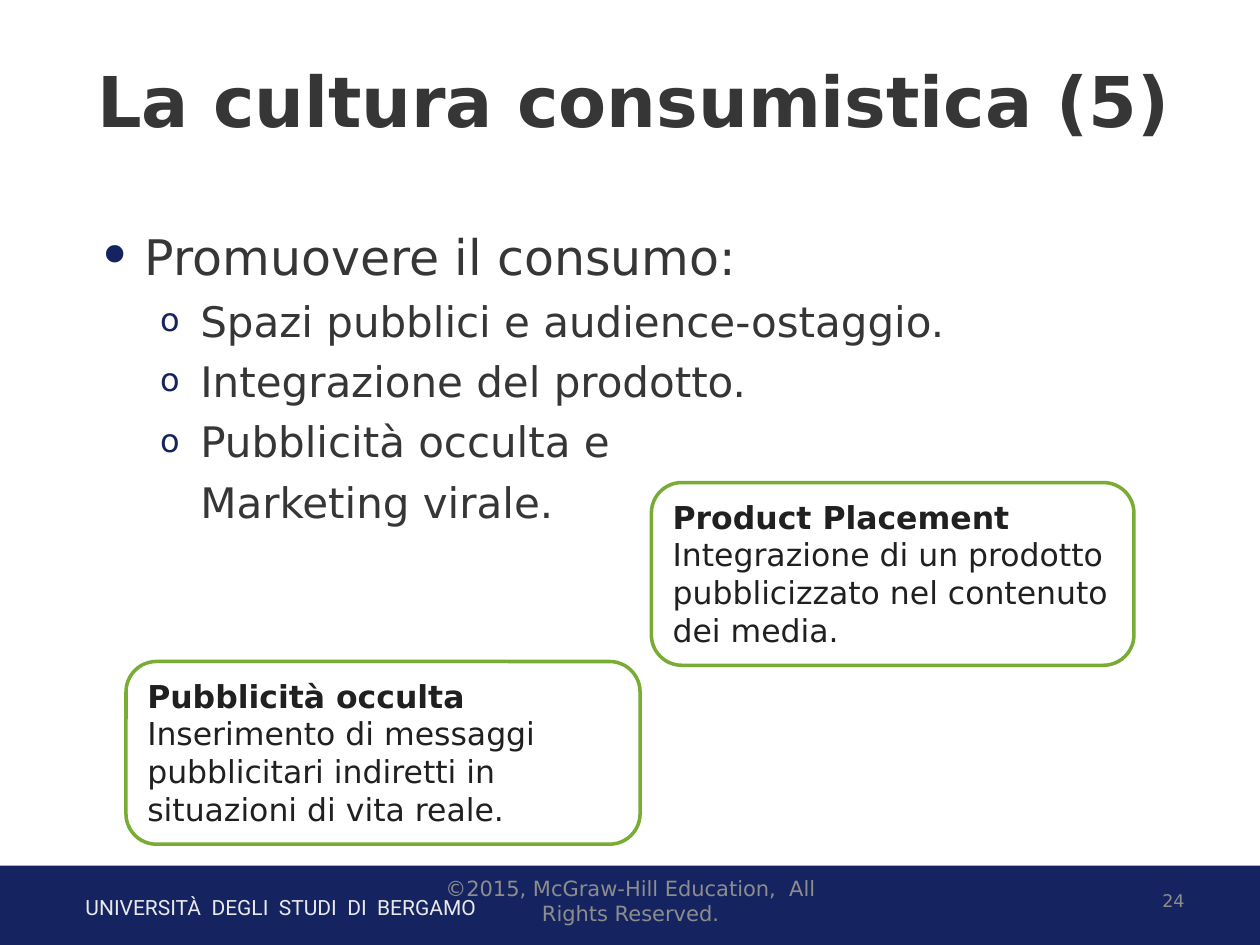
from lxml import etree
from pptx import Presentation
from pptx.dml.color import RGBColor
from pptx.enum.shapes import MSO_SHAPE as Kind
from pptx.enum.text import MSO_ANCHOR as Anchor, MSO_AUTO_SIZE as Fit, PP_ALIGN as Align
from pptx.oxml.ns import qn
from pptx.util import Inches, Pt

NAVY = RGBColor(0x15, 0x24, 0x60)
GREEN = RGBColor(0x78, 0xAC, 0x35)
WHITE = RGBColor(0xFF, 0xFF, 0xFF)
PALE = RGBColor(0xE9, 0xE9, 0xE9)
DARK = RGBColor(0x36, 0x36, 0x36)
INK = RGBColor(0x20, 0x20, 0x20)
GREY = RGBColor(0x8D, 0x8D, 0x8D)
SANS = "DejaVu Sans"

WIDTH, HEIGHT = 10, 7.5
BAR_TOP = 6.87
LEFT, SPAN = 0.67, 8.92

TITLE = "La cultura consumistica (5)"
# text, level, bullet
POINTS = [
    ("Promuovere il consumo:", 0, "•"),
    ("Spazi pubblici e audience-ostaggio.", 1, "o"),
    ("Integrazione del prodotto.", 1, "o"),
    ("Pubblicità occulta e", 1, "o"),
    ("Marketing virale.", 1, None),
]
# level: size, margin, hanging indent, bullet size in %, space before
LEVELS = {0: (28, 0.38, 0.38, 122, 0), 1: (24, 0.82, 0.32, 76, 5.6)}
CARDS = [
    ("Product Placement",
     "Integrazione di un prodotto pubblicizzato nel contenuto dei media.",
     (5.17, 3.83, 3.83, 1.45)),
    ("Pubblicità occulta",
     "Inserimento di messaggi pubblicitari indiretti in situazioni di vita reale.",
     (1, 5.25, 4.08, 1.45)),
]
SCHOOL = "UNIVERSITÀ  DEGLI  STUDI  DI  BERGAMO"
RIGHTS = "©2015, McGraw-Hill Education,  All Rights Reserved."
PAGE = "24"


def place(shape, box):
    shape.left, shape.top, shape.width, shape.height = map(Inches, box)


def write(para, text, size, color, font=SANS, bold=False, align=Align.LEFT):
    para.alignment = align
    run = para.add_run()
    run.text = text
    face = run.font
    face.name, face.size, face.bold = font, Pt(size), bold
    face.color.rgb = color


def frame(shape, anchor=Anchor.TOP):
    area = shape.text_frame
    area.word_wrap = True
    area.auto_size = Fit.NONE
    area.vertical_anchor = anchor
    return area


def label(slide, text, box, anchor=Anchor.MIDDLE, **form):
    shape = slide.shapes.add_textbox(*map(Inches, box))
    write(frame(shape, anchor).paragraphs[0], text, **form)


def block(slide, kind, box, fill, line=None):
    shape = slide.shapes.add_shape(kind, *map(Inches, box))
    shape.shadow.inherit = False
    shape.fill.solid()
    shape.fill.fore_color.rgb = fill
    if line is None:
        shape.line.fill.background()
    else:
        shape.line.color.rgb = line
        shape.line.width = Pt(2)
    return shape


def mark(para, char, margin, hang, share):
    """Set the indent and the bullet; without a bullet the line is flush."""
    props = para._p.get_or_add_pPr()
    props.set("marL", str(Inches(margin)))
    props.set("indent", str(-Inches(hang) if char else 0))
    if not char:
        etree.SubElement(props, qn("a:buNone"))
        return
    tint = etree.SubElement(props, qn("a:buClr"))
    etree.SubElement(tint, qn("a:srgbClr"), val=str(NAVY))
    etree.SubElement(props, qn("a:buSzPct"), val=str(share * 1000))
    etree.SubElement(props, qn("a:buFont"), typeface=SANS)
    etree.SubElement(props, qn("a:buChar"), char=char)


def main():
    deck = Presentation()
    deck.slide_width, deck.slide_height = Inches(WIDTH), Inches(HEIGHT)
    slide = deck.slides.add_slide(deck.slide_layouts[1])
    title, body = slide.placeholders

    place(title, (LEFT, 0.25, SPAN, 1.08))
    write(frame(title, Anchor.MIDDLE).paragraphs[0], TITLE, 40, DARK, bold=True)

    place(body, (LEFT, 1.75, SPAN, 4.92))
    area = frame(body)
    for row, (text, level, char) in enumerate(POINTS):
        para = area.add_paragraph() if row else area.paragraphs[0]
        size, margin, hang, share, gap = LEVELS[level]
        para.level = level
        para.space_before = Pt(gap)
        mark(para, char, margin, hang, share)
        write(para, text, size, DARK)

    block(slide, Kind.RECTANGLE, (0, BAR_TOP, WIDTH, HEIGHT - BAR_TOP), NAVY)
    label(slide, SCHOOL, (0.58, 7.05, 5.82, 0.3), Anchor.TOP,
          size=12, color=PALE, font="Roboto")
    label(slide, PAGE, (7.17, 6.95, 2.33, 0.4), size=10, color=GREY, align=Align.RIGHT)

    for head, text, box in CARDS:
        area = frame(block(slide, Kind.ROUNDED_RECTANGLE, box, WHITE, GREEN))
        write(area.paragraphs[0], head, 18, INK, bold=True)
        write(area.add_paragraph(), text, 18, INK)

    label(slide, RIGHTS, (3.42, 6.95, 3.17, 0.4), size=12, color=GREY, align=Align.CENTER)
    deck.save("out.pptx")


if __name__ == "__main__":
    main()
